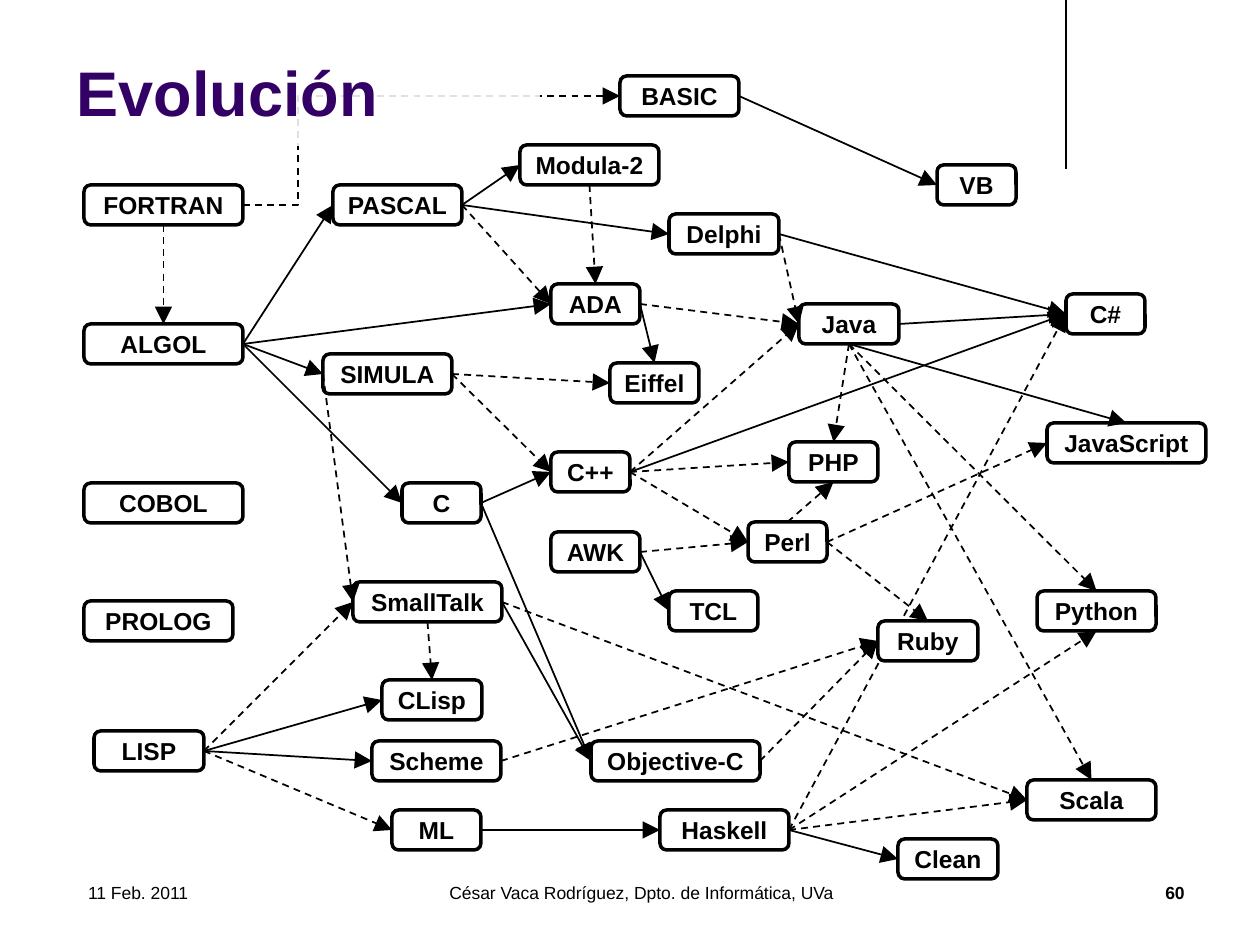
from dataclasses import dataclass

from lxml.etree import SubElement
from pptx import Presentation
from pptx.dml.color import RGBColor as RGB
from pptx.enum.dml import MSO_LINE_DASH_STYLE as Dash
from pptx.enum.shapes import MSO_AUTO_SHAPE_TYPE as Kind, MSO_CONNECTOR as Wire
from pptx.enum.text import MSO_ANCHOR as Anchor, PP_ALIGN as Align
from pptx.oxml.ns import qn
from pptx.util import Pt

SCALE = 914400 / 126
TOP, LEFT, BOTTOM, RIGHT = range(4)
NODE_H = 40


@dataclass(frozen=True)
class Theme:
    font: str = "Arial"
    ink: RGB = RGB(0, 0, 0)
    paper: RGB = RGB(255, 255, 255)
    head: RGB = RGB(0x33, 0x00, 0x66)
    title: int = 36
    node: int = 14
    foot: int = 10


THEME = Theme()

# name: left, top, width
NODES = {
    "FORTRAN": (84, 185, 159),
    "ALGOL": (84, 324, 159),
    "COBOL": (84, 483, 159),
    "PROLOG": (84, 601, 149),
    "LISP": (94, 731, 110),
    "PASCAL": (333, 185, 129),
    "SIMULA": (323, 354, 129),
    "C": (402, 483, 79),
    "SmallTalk": (353, 582, 149),
    "CLisp": (382, 680, 100),
    "Scheme": (372, 741, 129),
    "ML": (392, 810, 89),
    "BASIC": (620, 76, 119),
    "Modula-2": (520, 145, 139),
    "Delphi": (669, 214, 110),
    "ADA": (551, 284, 89),
    "Eiffel": (610, 363, 89),
    "C++": (551, 452, 79),
    "AWK": (551, 532, 89),
    "TCL": (669, 591, 89),
    "Objective-C": (591, 741, 169),
    "Haskell": (660, 810, 129),
    "Java": (799, 304, 100),
    "PHP": (789, 442, 89),
    "Perl": (748, 522, 79),
    "Ruby": (878, 621, 100),
    "Clean": (898, 839, 100),
    "VB": (937, 165, 79),
    "C#": (1066, 294, 79),
    "JavaScript": (1047, 423, 159),
    "Python": (1037, 591, 119),
    "Scala": (1027, 780, 129),
}

# start, its side, side of the ends, ends
SOLID = [
    ("ALGOL", RIGHT, LEFT, ["PASCAL", "ADA", "SIMULA", "C"]),
    ("PASCAL", RIGHT, LEFT, ["Modula-2", "Delphi"]),
    ("C", RIGHT, LEFT, ["C++", "Objective-C"]),
    ("C++", RIGHT, LEFT, ["C#"]),
    ("BASIC", RIGHT, LEFT, ["VB"]),
    ("Delphi", RIGHT, LEFT, ["C#"]),
    ("ADA", RIGHT, TOP, ["Eiffel"]),
    ("SmallTalk", RIGHT, LEFT, ["Objective-C"]),
    ("Java", RIGHT, LEFT, ["C#"]),
    ("Java", BOTTOM, TOP, ["JavaScript"]),
    ("AWK", RIGHT, LEFT, ["TCL"]),
    ("LISP", RIGHT, LEFT, ["CLisp", "Scheme"]),
    ("ML", RIGHT, LEFT, ["Haskell"]),
    ("Haskell", RIGHT, LEFT, ["Clean"]),
]
DASHED = [
    ("FORTRAN", BOTTOM, TOP, ["ALGOL"]),
    ("PASCAL", RIGHT, LEFT, ["ADA"]),
    ("Modula-2", BOTTOM, TOP, ["ADA"]),
    ("Delphi", RIGHT, LEFT, ["Java"]),
    ("ADA", RIGHT, LEFT, ["Java"]),
    ("SIMULA", RIGHT, LEFT, ["C++", "Eiffel"]),
    ("SIMULA", LEFT, LEFT, ["SmallTalk"]),
    ("C++", RIGHT, LEFT, ["Java", "Perl", "PHP"]),
    ("SmallTalk", BOTTOM, TOP, ["CLisp"]),
    ("SmallTalk", RIGHT, LEFT, ["Scala"]),
    ("Objective-C", RIGHT, LEFT, ["Ruby"]),
    ("Scheme", RIGHT, LEFT, ["Ruby"]),
    ("Java", BOTTOM, TOP, ["PHP", "Python", "Scala"]),
    ("AWK", RIGHT, LEFT, ["Perl"]),
    ("LISP", RIGHT, LEFT, ["SmallTalk", "ML"]),
    ("Haskell", RIGHT, BOTTOM, ["Python"]),
    ("Haskell", RIGHT, LEFT, ["Scala"]),
    ("Perl", TOP, BOTTOM, ["PHP"]),
    ("Perl", RIGHT, TOP, ["Ruby"]),
    ("Perl", RIGHT, LEFT, ["JavaScript"]),
]


def px(n):
    return round(n * SCALE)


def write(shape, text, size, color=THEME.ink, bold=True, align=Align.LEFT, pad=13):
    frame = shape.text_frame
    frame.text = text
    frame.word_wrap = True
    frame.vertical_anchor = Anchor.MIDDLE
    frame.margin_left = px(pad)
    para = frame.paragraphs[0]
    para.alignment = align
    font = para.runs[0].font
    font.name, font.size, font.bold = THEME.font, Pt(size), bold
    font.color.rgb = color


def add_text(slide, box, text, size, **look):
    shape = slide.shapes.add_textbox(*map(px, box))
    write(shape, text, size, **look)
    return shape


def add_title(slide):
    box = add_text(slide, (64, 37, 476, 109), "Evolución", THEME.title, color=THEME.head)
    box.fill.solid()
    box.fill.fore_color.rgb = THEME.paper
    tone = box.fill._xPr.find(qn("a:solidFill"))[0]
    SubElement(tone, qn("a:alpha"), val="88000")


def add_node(slide, name, left, top, width):
    box = (left, top, width, NODE_H)
    node = slide.shapes.add_shape(Kind.ROUNDED_RECTANGLE, *map(px, box))
    node.shadow.inherit = False
    node.fill.solid()
    node.fill.fore_color.rgb = THEME.paper
    node.line.color.rgb = THEME.ink
    node.line.width = Pt(2)
    write(node, name, THEME.node, align=Align.CENTER, pad=0)
    node.text_frame.margin_right = 0
    return node


def add_line(slide, kind=Wire.STRAIGHT, ends=(0, 0, 0, 0), width=1):
    line = slide.shapes.add_connector(kind, *map(px, ends))
    SubElement(line._element.spPr, qn("a:effectLst"))
    line.line.color.rgb = THEME.ink
    line.line.width = Pt(width)
    return line


def add_arrow(slide, start, side, end, goal, dash=False, kind=Wire.STRAIGHT):
    """Join side of start to goal, a side of end."""
    arrow = add_line(slide, kind)
    arrow.begin_connect(start, side)
    arrow.end_connect(end, goal)
    if dash:
        arrow.line.dash_style = Dash.DASH
    stroke = arrow.line._get_or_add_ln()
    SubElement(stroke, qn("a:tailEnd"), type="triangle", w="lg", len="lg")
    return arrow


def set_bend(arrow, share):
    """Place the elbow at a share of the arrow's width."""
    guides = arrow._element.spPr.find(qn("a:prstGeom")).get_or_add_avLst()
    SubElement(guides, qn("a:gd"), name="adj1", fmla=f"val {round(share * 100000)}")


def send_back(slide, shape):
    slide.shapes._spTree.insert(2, shape._element)


def add_footer(slide):
    size = THEME.foot
    add_text(slide, (63, 861, 294, 63), "11 Feb. 2011", size, bold=False, pad=25)
    add_text(slide, (382, 861, 506, 63), "César Vaca Rodríguez, Dpto. de Informática, UVa",
             size, bold=False, align=Align.CENTER, pad=25)
    add_text(slide, (903, 861, 294, 63), "60", size, align=Align.RIGHT)


def main():
    deck = Presentation()
    deck.slide_width, deck.slide_height = px(1260), px(945)
    slide = deck.slides.add_slide(deck.slide_layouts[6])

    add_line(slide, ends=(1066, 0, 1066, 169), width=0.75)
    add_footer(slide)
    add_title(slide)
    nodes = {name: add_node(slide, name, *place) for name, place in NODES.items()}
    for links, dash in ((SOLID, False), (DASHED, True)):
        for start, side, goal, ends in links:
            for end in ends:
                add_arrow(slide, nodes[start], side, nodes[end], goal, dash)

    under = add_arrow(slide, nodes["Haskell"], RIGHT, nodes["C#"], LEFT, True)
    bent = add_arrow(slide, nodes["FORTRAN"], RIGHT, nodes["BASIC"], LEFT, True, Wire.ELBOW)
    set_bend(bent, 0.145)
    for arrow in (under, bent):
        send_back(slide, arrow)
    deck.save("out.pptx")


if __name__ == "__main__":
    main()
